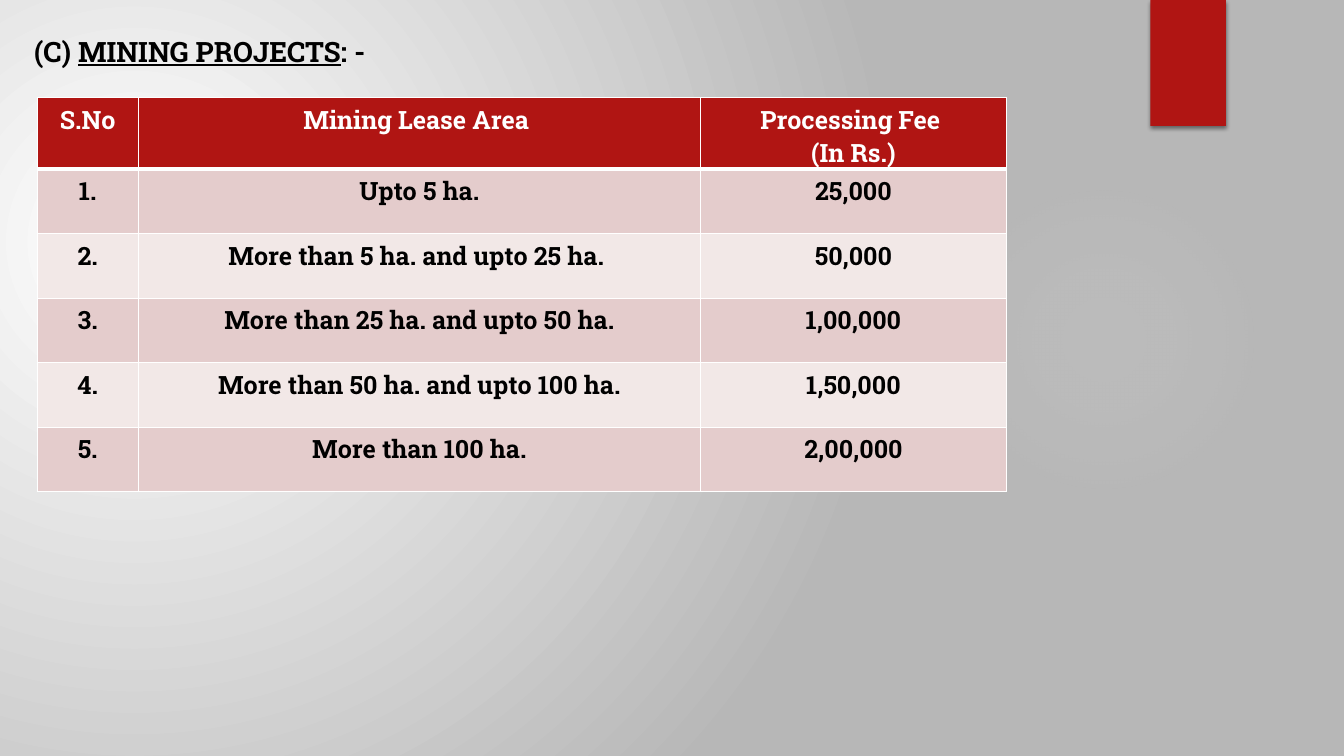
from pptx import Presentation
from pptx.dml.color import RGBColor
from pptx.enum.shapes import MSO_SHAPE
from pptx.enum.text import MSO_AUTO_SIZE, PP_ALIGN
from pptx.oxml import parse_xml
from pptx.oxml.ns import nsdecls, qn
from pptx.util import Inches, Pt

ELLIPSE, RECTANGLE = MSO_SHAPE.OVAL, MSO_SHAPE.RECTANGLE
CENTER = PP_ALIGN.CENTER
FIT_TEXT = MSO_AUTO_SIZE.SHAPE_TO_FIT_TEXT
FONT = "Roboto Slab"
BLACK = RGBColor(0x00, 0x00, 0x00)
WHITE = RGBColor(0xFF, 0xFF, 0xFF)
RED = RGBColor(0xB0, 0x15, 0x13)
DARK_BAND = RGBColor(0xE4, 0xCC, 0xCC)
LIGHT_BAND = RGBColor(0xF2, 0xE8, 0xE7)
GREY = RGBColor(0xB7, 0xB7, 0xB7)
GLOW = RGBColor(0xF3, 0xF3, 0xF3)

COLUMN_WIDTHS = (1, 5.58, 3.03)
HEADER_HEIGHT, ROW_HEIGHT = 0.71, 0.64
HEADINGS = ("S.No", "Mining Lease Area ", "Processing Fee \n(In Rs.)")
FEES = (
    ("Upto 5 ha.", "25,000"),
    ("More than 5 ha. and upto 25 ha. ", "50,000"),
    ("More than 25 ha. and upto 50 ha.", "1,00,000"),
    ("More than 50 ha. and upto 100 ha.", "1,50,000"),
    ("More than 100 ha.", "2,00,000"),
)


def radial_gradient(stops, focus):
    """Return a circular gradient fill from (position, colour, opacity) stops."""
    stop_xml = "".join(
        f'<a:gs pos="{position * 1000}"><a:srgbClr val="{color}">'
        f'<a:alpha val="{opacity * 1000}"/></a:srgbClr></a:gs>'
        for position, color, opacity in stops)
    left, top, right, bottom = (share * 1000 for share in focus)
    return parse_xml(
        f'<a:gradFill {nsdecls("a")} rotWithShape="1"><a:gsLst>{stop_xml}</a:gsLst>'
        f'<a:path path="circle"><a:fillToRect l="{left}" t="{top}" r="{right}" '
        f'b="{bottom}"/></a:path></a:gradFill>')


def swap_solid_fill(properties, gradient):
    """Put a gradient where the solid fill stands."""
    properties.replace(properties.find(qn("a:solidFill")), gradient)


def add_plain_shape(slide, kind, box, color):
    """Add a filled shape without outline or shadow."""
    shape = slide.shapes.add_shape(kind, *map(Inches, box))
    shape.shadow.inherit = False
    shape.fill.solid()
    shape.fill.fore_color.rgb = color
    shape.line.fill.background()
    return shape


def add_run(paragraph, text, size, color, underline=False):
    """Add one bold run."""
    run = paragraph.add_run()
    run.text = text
    run.font.name, run.font.size = FONT, Pt(size)
    run.font.bold, run.font.underline = True, underline
    run.font.color.rgb = color


def add_backdrop(slide, glow_box, ribbon_box):
    """Paint the background, its soft glow and the red ribbon."""
    slide.background.fill.solid()
    swap_solid_fill(
        slide.element.find(".//" + qn("p:bgPr")),
        radial_gradient(((0, WHITE, 100), (100, GREY, 100)), (45, 65, 125, 100)))
    glow = add_plain_shape(slide, ELLIPSE, glow_box, GLOW)
    swap_solid_fill(
        glow.element.spPr,
        radial_gradient(((0, GLOW, 7), (36, GLOW, 6), (69, GLOW, 0)), (50,) * 4))
    ribbon = add_plain_shape(slide, RECTANGLE, ribbon_box, RED)
    ribbon.element.spPr.find(qn("a:effectLst")).append(parse_xml(
        f'<a:outerShdw {nsdecls("a")} blurRad="{Pt(3)}" dist="{Pt(2)}" '
        f'dir="5400000" rotWithShape="0"><a:srgbClr val="{BLACK}">'
        '<a:alpha val="45000"/></a:srgbClr></a:outerShdw>'))


def add_heading(slide, box):
    """Write the heading with its underlined subject."""
    frame = slide.shapes.add_textbox(*map(Inches, box)).text_frame
    frame.word_wrap = False
    frame.auto_size = FIT_TEXT
    for text, underline in (("(C) ", False), ("MINING PROJECTS", True), (": -", False)):
        add_run(frame.paragraphs[0], text, 20, BLACK, underline)


def fill_cell(cell, text, fill_color, text_color, bottom_width):
    """Write, border and fill one table cell."""
    cell.margin_bottom = 0
    for index, line in enumerate(text.split("\n")):
        frame = cell.text_frame
        paragraph = frame.add_paragraph() if index else frame.paragraphs[0]
        paragraph.alignment = CENTER
        add_run(paragraph, line, 18, text_color)
    properties = cell._tc.get_or_add_tcPr()
    for side, width in (("L", 1), ("R", 1), ("T", 1), ("B", bottom_width)):
        properties.append(parse_xml(
            f'<a:ln{side} {nsdecls("a")} w="{Pt(width)}"><a:solidFill>'
            f'<a:srgbClr val="{WHITE}"/></a:solidFill></a:ln{side}>'))
    cell.fill.solid()
    cell.fill.fore_color.rgb = fill_color


def add_fee_table(slide, left, top):
    """Build the table of processing fees by lease area."""
    rows = [HEADINGS] + [(f"{number}.", *fee) for number, fee in enumerate(FEES, 1)]
    heights = [HEADER_HEIGHT] + [ROW_HEIGHT] * len(FEES)
    table = slide.shapes.add_table(
        len(rows), len(COLUMN_WIDTHS), Inches(left), Inches(top),
        Inches(sum(COLUMN_WIDTHS)), Inches(sum(heights))).table
    for column, width in zip(table.columns, COLUMN_WIDTHS):
        column.width = Inches(width)
    for row_index, (texts, height) in enumerate(zip(rows, heights)):
        table.rows[row_index].height = Inches(height)
        if row_index == 0:
            look = (RED, WHITE, 3)
        else:
            look = (DARK_BAND if row_index % 2 else LIGHT_BAND, BLACK, 1)
        for column_index, text in enumerate(texts):
            fill_cell(table.cell(row_index, column_index), text, *look)


def main():
    """Build and save the mining fees slide."""
    presentation = Presentation()
    presentation.slide_width, presentation.slide_height = Inches(13.33), Inches(7.5)
    slide = presentation.slides.add_slide(presentation.slide_layouts[6])
    add_backdrop(slide, (9.41, 1.83, 3.08, 3.08), (11.41, 0, 0.75, 1.25))
    add_heading(slide, (0.24, 0.29, 3.88, 0.44))
    add_fee_table(slide, 0.37, 0.97)
    presentation.save("out.pptx")


if __name__ == "__main__":
    main()
